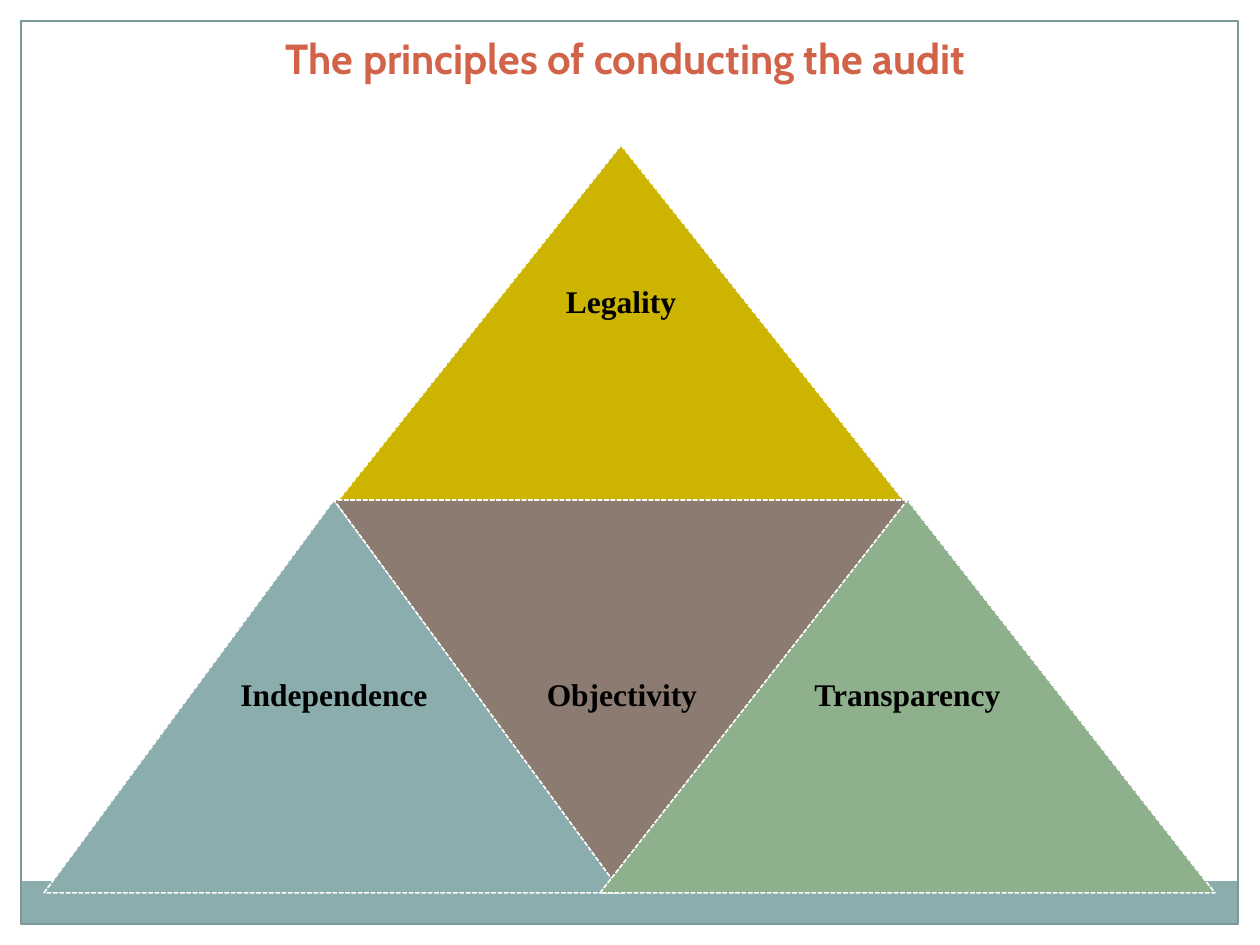
import pptx
import pptx.dml.color
import pptx.enum.dml
import pptx.enum.shapes
import pptx.enum.text
import pptx.util

RGBColor = pptx.dml.color.RGBColor
Shape = pptx.enum.shapes.MSO_SHAPE
Anchor = pptx.enum.text.MSO_ANCHOR
CENTER = pptx.enum.text.PP_ALIGN.CENTER

WHITE = RGBColor(0xFF, 0xFF, 0xFF)
BLACK = RGBColor(0x00, 0x00, 0x00)
RED = RGBColor(0xD1, 0x63, 0x49)
GOLD = RGBColor(0xCC, 0xB4, 0x00)
TEAL = RGBColor(0x8C, 0xAD, 0xAE)
DARK_TEAL = RGBColor(0x7C, 0x99, 0x9A)
BROWN = RGBColor(0x8C, 0x7B, 0x70)
GREEN = RGBColor(0x8F, 0xB0, 0x8C)

PX_PER_INCH = 126
INSET = 9


def px(length):
    """Turn a length in pixels into EMU."""
    return pptx.util.Emu(round(length * 914400 / PX_PER_INCH))


def add_frame(slide, left, top, width, height):
    """Draw the page border with its band along the bottom edge."""
    band_height = 43
    band = slide.shapes.add_shape(
        Shape.RECTANGLE, px(left), px(top + height - band_height), px(width), px(band_height))
    band.fill.solid()
    band.fill.fore_color.rgb = TEAL
    band.line.fill.background()
    border = slide.shapes.add_shape(
        Shape.RECTANGLE, px(left), px(top), px(width), px(height))
    border.fill.background()
    border.line.color.rgb = DARK_TEAL
    border.line.width = pptx.util.Pt(0.75)
    for shape in (band, border):
        shape.shadow.inherit = False


def add_title(slide, text, left, top, width, height):
    """Place and format the title placeholder."""
    title = slide.shapes.title
    title.left, title.top, title.width, title.height = map(px, (left, top, width, height))
    title.text_frame.vertical_anchor = Anchor.TOP
    title.text_frame.text = text
    paragraph = title.text_frame.paragraphs[0]
    paragraph.alignment = CENTER
    paragraph.font.name = "Cabin"
    paragraph.font.size = pptx.util.Pt(24)
    paragraph.font.bold = True
    paragraph.font.color.rgb = RED


def add_principle(slide, text, color, box, rotation=0, raised=0):
    """Draw one triangle and its label, centred in the box or raised above its middle."""
    position = [px(length) for length in box]
    triangle = slide.shapes.add_shape(Shape.ISOSCELES_TRIANGLE, *position)
    triangle.rotation = rotation
    triangle.shadow.inherit = False
    triangle.fill.solid()
    triangle.fill.fore_color.rgb = color
    triangle.line.color.rgb = WHITE
    triangle.line.width = pptx.util.Pt(0.9)
    triangle.line.dash_style = pptx.enum.dml.MSO_LINE.SQUARE_DOT

    frame = slide.shapes.add_textbox(*position).text_frame
    frame.word_wrap = True
    frame.vertical_anchor = Anchor.MIDDLE
    frame.margin_left = frame.margin_right = frame.margin_top = px(INSET)
    frame.margin_bottom = px(INSET + 2 * raised)
    frame.text = text
    paragraph = frame.paragraphs[0]
    paragraph.alignment = CENTER
    paragraph.line_spacing = 0.9
    paragraph.font.name = "Times New Roman"
    paragraph.font.size = pptx.util.Pt(18)
    paragraph.font.bold = True
    paragraph.font.color.rgb = BLACK


def add_pyramid(slide, left, top):
    """Stack the four principles: one on top, three in the row below."""
    row_top, row_height = top + 355, 393
    add_principle(slide, "Legality", GOLD, (left + 289, top, 576, 362), raised=23)
    add_principle(slide, "Independence", TEAL, (left, row_top, 580, row_height))
    add_principle(slide, "Objectivity", BROWN, (left + 290, row_top, 576, row_height), rotation=180)
    add_principle(slide, "Transparency", GREEN, (left + 556, row_top, 615, row_height))


def main():
    """Build the slide and save it."""
    presentation = pptx.Presentation()
    presentation.slide_width = px(1260)
    presentation.slide_height = px(945)
    slide = presentation.slides.add_slide(presentation.slide_layouts.get_by_name("Title Only"))
    add_frame(slide, 21, 21, 1217, 903)
    add_title(slide, "The principles of conducting the audit", 15, 26, 1221, 63)
    add_pyramid(slide, 44, 145)
    presentation.save("out.pptx")


if __name__ == "__main__":
    main()
